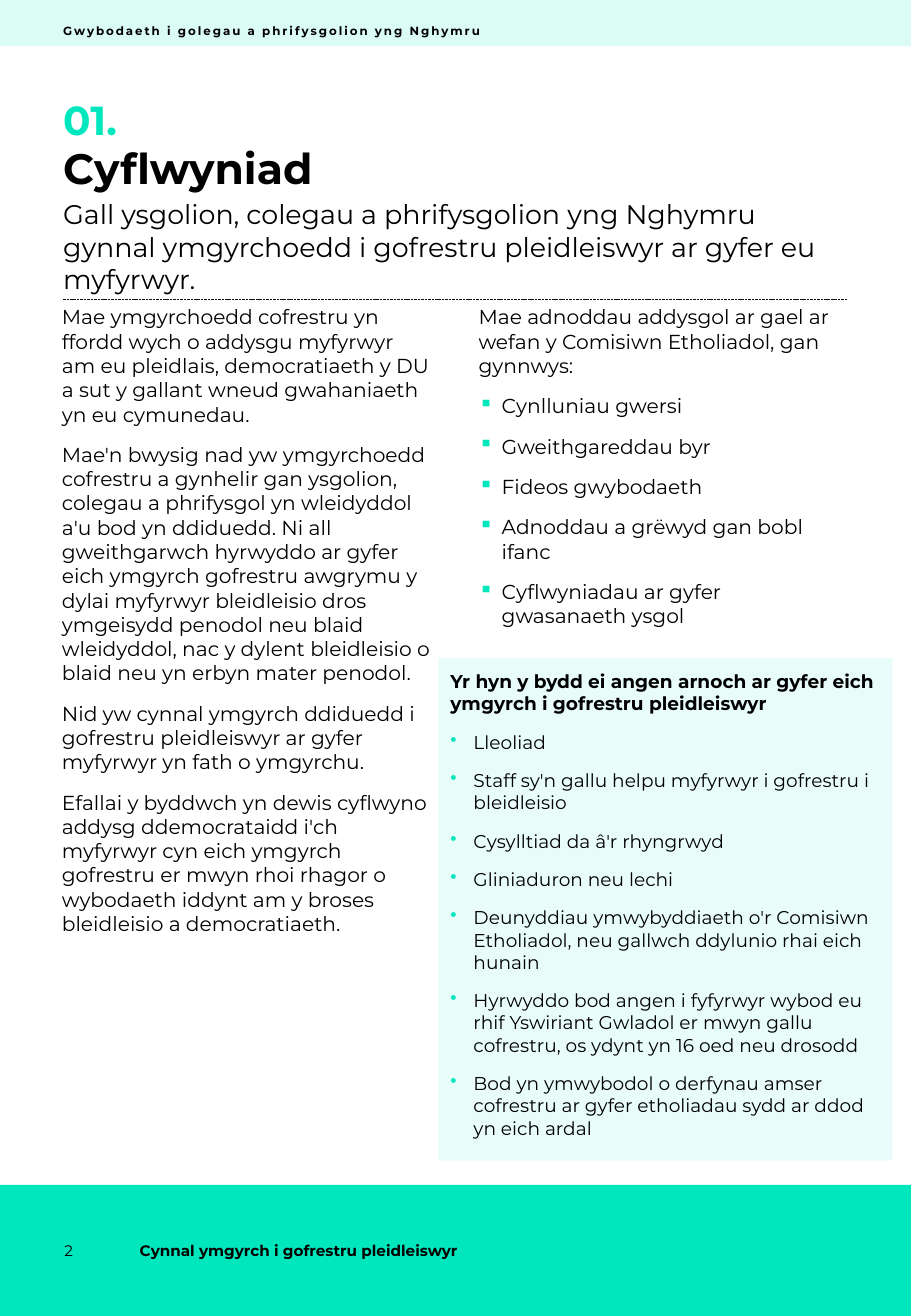
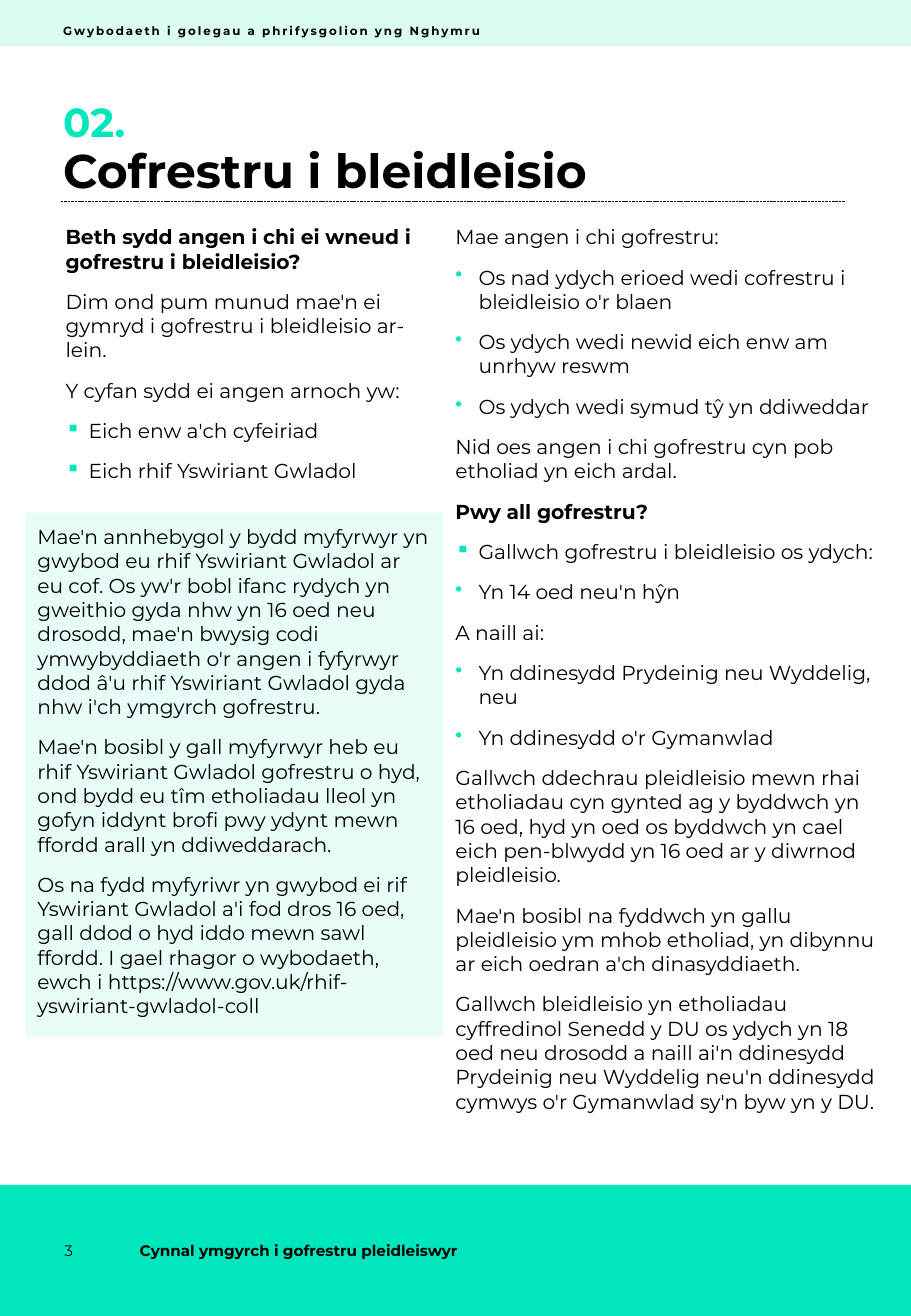
from dataclasses import dataclass

import lxml.etree
import pptx
import pptx.dml.color
import pptx.enum.dml
import pptx.enum.shapes
import pptx.enum.text
import pptx.oxml.ns
import pptx.util

Inches = pptx.util.Inches
Pt = pptx.util.Pt
qn = pptx.oxml.ns.qn
ANCHOR = pptx.enum.text.MSO_ANCHOR


def color(hex_string):
    return pptx.dml.color.RGBColor.from_string(hex_string)


@dataclass
class Item:
    """One paragraph, with a bullet character if it has one."""
    text: str
    bullet: str = ""
    bold: bool = False


def bullets(character, *texts):
    return [Item(text, character) for text in texts]


def plain(*texts):
    return [Item(text) for text in texts]


class Booklet:
    FONT = "Montserrat"
    ACCENT = "00E7BD"
    INK = "000000"
    RULE = "0D0D0D"
    WIDTH, HEIGHT = 7.5, 10.84
    MARGIN, TEXT_WIDTH = 0.52, 6.46
    FOOTER_TOP, FOOTER_HEIGHT = 9.76, 1.08
    HEADER = "Gwybodaeth i golegau a phrifysgolion yng Nghymru"
    FOOTER = "Cynnal ymgyrch i gofrestru pleidleiswyr"

    def __init__(self):
        self.deck = pptx.Presentation()
        self.deck.slide_width = Inches(self.WIDTH)
        self.deck.slide_height = Inches(self.HEIGHT)
        self.page = None

    def add_page(self, page_number):
        """Start a page with its bands, header and footer."""
        self.page = self.deck.slides.add_slide(self.deck.slide_layouts[6])
        self.band(0, 0, self.WIDTH, 0.38, opacity=14)
        self.band(0, self.FOOTER_TOP, self.WIDTH, self.FOOTER_HEIGHT)
        header = self.text(self.MARGIN, 0.07, 4.2, 0.37, [Item(self.HEADER, bold=True)],
                           size=7, anchor=ANCHOR.MIDDLE)
        header.paragraphs[0].runs[0]._r.get_or_add_rPr().set("spc", "120")
        for left, width, item in ((0.53, 0.52, Item(str(page_number))),
                                  (1.15, 3.24, Item(self.FOOTER, bold=True))):
            footer = self.text(left, self.FOOTER_TOP, width, self.FOOTER_HEIGHT, [item],
                               size=9, anchor=ANCHOR.MIDDLE)
            footer.paragraphs[0].space_after = Pt(0)

    def band(self, left, top, width, height, opacity=100):
        shape = self.page.shapes.add_shape(
            pptx.enum.shapes.MSO_SHAPE.RECTANGLE,
            Inches(left), Inches(top), Inches(width), Inches(height))
        shape.shadow.inherit = False
        shape.line.fill.background()
        shape.fill.solid()
        shape.fill.fore_color.rgb = color(self.ACCENT)
        if opacity < 100:
            fill = shape._element.spPr.find(qn("a:solidFill"))
            lxml.etree.SubElement(fill[0], qn("a:alpha"), val=str(opacity * 1000))
        return shape

    def text(self, left, top, width, height, items, size=12, ink=INK, anchor=ANCHOR.TOP):
        box = self.page.shapes.add_textbox(
            Inches(left), Inches(top), Inches(width), Inches(height))
        return self.fill_frame(box.text_frame, items, size, ink, anchor, inset=0)

    def panel(self, left, top, width, height, items, size=12):
        """Tinted box with text inside."""
        shape = self.band(left, top, width, height, opacity=9)
        return self.fill_frame(shape.text_frame, items, size, self.INK, ANCHOR.TOP, inset=0.1)

    def fill_frame(self, frame, items, size, ink, anchor, inset):
        frame.word_wrap = True
        frame.vertical_anchor = anchor
        frame.margin_left = frame.margin_right = Inches(inset)
        frame.margin_top = frame.margin_bottom = Inches(inset)
        for index, item in enumerate(items):
            para = frame.add_paragraph() if index else frame.paragraphs[0]
            para.text = item.text
            para.alignment = pptx.enum.text.PP_ALIGN.LEFT
            para.space_before = Pt(7.5 if index else 0)
            para.space_after = Pt(2)
            if item.bullet:
                self.add_bullet(para, item.bullet)
            para.font.name = self.FONT
            para.font.size = Pt(size)
            para.font.bold = item.bold
            para.font.color.rgb = color(ink)
        return frame

    def add_bullet(self, para, character):
        properties = para._p.get_or_add_pPr()
        indent = Inches(0.19)
        properties.set("marL", str(indent))
        properties.set("indent", str(-indent))
        tint = lxml.etree.SubElement(properties, qn("a:buClr"))
        lxml.etree.SubElement(tint, qn("a:srgbClr"), val=self.ACCENT)
        lxml.etree.SubElement(properties, qn("a:buChar"), char=character)

    def heading(self, number, number_top, title, title_size):
        self.text(self.MARGIN, number_top, self.TEXT_WIDTH, 0.37, [Item(number, bold=True)],
                  size=24, ink=self.ACCENT)
        frame = self.text(self.MARGIN, 1.22, self.TEXT_WIDTH, 0.41, [Item(title, bold=True)],
                          size=title_size)
        frame.paragraphs[0].line_spacing = 0.9

    def rule(self, left, top):
        line = self.page.shapes.add_connector(
            pptx.enum.shapes.MSO_CONNECTOR.STRAIGHT,
            Inches(left), Inches(top), Inches(left + self.TEXT_WIDTH), Inches(top))
        line.line.color.rgb = color(self.RULE)
        line.line.width = Pt(0.5)
        line.line.dash_style = pptx.enum.dml.MSO_LINE.SQUARE_DOT
        lxml.etree.SubElement(line._element.spPr, qn("a:effectLst"))


def add_introduction(booklet):
    booklet.add_page(2)
    booklet.heading("01.", 0.78, "Cyflwyniad", 25.2)
    booklet.text(booklet.MARGIN, 1.63, booklet.TEXT_WIDTH, 0.8, plain(
        "Gall ysgolion, colegau a phrifysgolion yng Nghymru gynnal ymgyrchoedd i gofrestru "
        "pleidleiswyr ar gyfer eu myfyrwyr."), size=16)
    booklet.rule(0.52, 2.47)

    campaigns = plain(
        "Mae ymgyrchoedd cofrestru yn ffordd wych o addysgu myfyrwyr am eu pleidlais, "
        "democratiaeth y DU a sut y gallant wneud gwahaniaeth yn eu cymunedau.",
        "Mae'n bwysig nad yw ymgyrchoedd cofrestru a gynhelir gan ysgolion, colegau a "
        "phrifysgol yn wleidyddol a'u bod yn ddiduedd. Ni all gweithgarwch hyrwyddo ar gyfer "
        "eich ymgyrch gofrestru awgrymu y dylai myfyrwyr bleidleisio dros ymgeisydd penodol "
        "neu blaid wleidyddol, nac y dylent bleidleisio o blaid neu yn erbyn mater penodol.",
        "Nid yw cynnal ymgyrch ddiduedd i gofrestru pleidleiswyr ar gyfer myfyrwyr yn fath o "
        "ymgyrchu.",
        "Efallai y byddwch yn dewis cyflwyno addysg ddemocrataidd i'ch myfyrwyr cyn eich "
        "ymgyrch gofrestru er mwyn rhoi rhagor o wybodaeth iddynt am y broses bleidleisio a "
        "democratiaeth.")
    resources = plain(
        "Mae adnoddau addysgol ar gael ar wefan y Comisiwn Etholiadol, gan gynnwys:",
    ) + bullets(
        "▪",
        "Cynlluniau gwersi",
        "Gweithgareddau byr",
        "Fideos gwybodaeth",
        "Adnoddau a grëwyd gan bobl ifanc",
        "Cyflwyniadau ar gyfer gwasanaeth ysgol")
    column_width, gap = 3.04, 0.39
    for column, (items, height) in enumerate(((campaigns, 5.25), (resources, 2.75))):
        booklet.text(0.51 + column * (column_width + gap), 2.51, column_width, height, items)

    booklet.panel(3.61, 5.42, 3.74, 4.14, [
        Item("Yr hyn y bydd ei angen arnoch ar gyfer eich ymgyrch i gofrestru pleidleiswyr",
             bold=True),
        *bullets(
            "•",
            "Lleoliad",
            "Staff sy'n gallu helpu myfyrwyr i gofrestru i bleidleisio",
            "Cysylltiad da â'r rhyngrwyd",
            "Gliniaduron neu lechi",
            "Deunyddiau ymwybyddiaeth o'r Comisiwn Etholiadol, neu gallwch ddylunio rhai eich "
            "hunain",
            "Hyrwyddo bod angen i fyfyrwyr wybod eu rhif Yswiriant Gwladol er mwyn gallu "
            "cofrestru, os ydynt yn 16 oed neu drosodd",
            "Bod yn ymwybodol o derfynau amser cofrestru ar gyfer etholiadau sydd ar ddod yn "
            "eich ardal"),
    ], size=11)


def add_registration(booklet):
    booklet.add_page(3)
    booklet.heading("02.", 0.8, "Cofrestru i bleidleisio", 28)
    booklet.rule(0.5, 1.66)

    booklet.text(0.54, 1.85, 2.96, 2.23, [
        Item("Beth sydd angen i chi ei wneud i gofrestru i bleidleisio?", bold=True),
        *plain("Dim ond pum munud mae'n ei gymryd i gofrestru i bleidleisio ar-lein.",
               "Y cyfan sydd ei angen arnoch yw:"),
        *bullets("▪", "Eich enw a'ch cyfeiriad", "Eich rhif Yswiriant Gwladol"),
    ])

    booklet.panel(0.21, 4.22, 3.44, 4.32, plain(
        "Mae'n annhebygol y bydd myfyrwyr yn gwybod eu rhif Yswiriant Gwladol ar eu cof. Os "
        "yw'r bobl ifanc rydych yn gweithio gyda nhw yn 16 oed neu drosodd, mae'n bwysig codi "
        "ymwybyddiaeth o'r angen i fyfyrwyr ddod â'u rhif Yswiriant Gwladol gyda nhw i'ch "
        "ymgyrch gofrestru.",
        "Mae'n bosibl y gall myfyrwyr heb eu rhif Yswiriant Gwladol gofrestru o hyd, ond bydd "
        "eu tîm etholiadau lleol yn gofyn iddynt brofi pwy ydynt mewn ffordd arall yn "
        "ddiweddarach.",
        "Os na fydd myfyriwr yn gwybod ei rif Yswiriant Gwladol a'i fod dros 16 oed, gall ddod "
        "o hyd iddo mewn sawl ffordd. I gael rhagor o wybodaeth, ewch i "
        "https://www.gov.uk/rhif-yswiriant-gwladol-coll"))

    booklet.text(3.75, 1.85, 3.46, 7.6, [
        *plain("Mae angen i chi gofrestru:"),
        *bullets("•",
                 "Os nad ydych erioed wedi cofrestru i bleidleisio o'r blaen",
                 "Os ydych wedi newid eich enw am unrhyw reswm",
                 "Os ydych wedi symud tŷ yn ddiweddar"),
        *plain("Nid oes angen i chi gofrestru cyn pob etholiad yn eich ardal."),
        Item("Pwy all gofrestru?", bold=True),
        *bullets("▪", "Gallwch gofrestru i bleidleisio os ydych: "),
        *bullets("•", "Yn 14 oed neu'n hŷn"),
        *plain("A naill ai:"),
        *bullets("•",
                 "Yn ddinesydd Prydeinig neu Wyddelig, neu",
                 "Yn ddinesydd o'r Gymanwlad"),
        *plain(
            "Gallwch ddechrau pleidleisio mewn rhai etholiadau cyn gynted ag y byddwch yn 16 "
            "oed, hyd yn oed os byddwch yn cael eich pen-blwydd yn 16 oed ar y diwrnod "
            "pleidleisio.",
            "Mae'n bosibl na fyddwch yn gallu pleidleisio ym mhob etholiad, yn dibynnu ar eich "
            "oedran a'ch dinasyddiaeth.",
            "Gallwch bleidleisio yn etholiadau cyffredinol Senedd y DU os ydych yn 18 oed neu "
            "drosodd a naill ai'n ddinesydd Prydeinig neu Wyddelig neu'n ddinesydd cymwys o'r "
            "Gymanwlad sy'n byw yn y DU."),
    ])


def main():
    booklet = Booklet()
    add_introduction(booklet)
    add_registration(booklet)
    booklet.deck.save("out.pptx")


if __name__ == "__main__":
    main()
